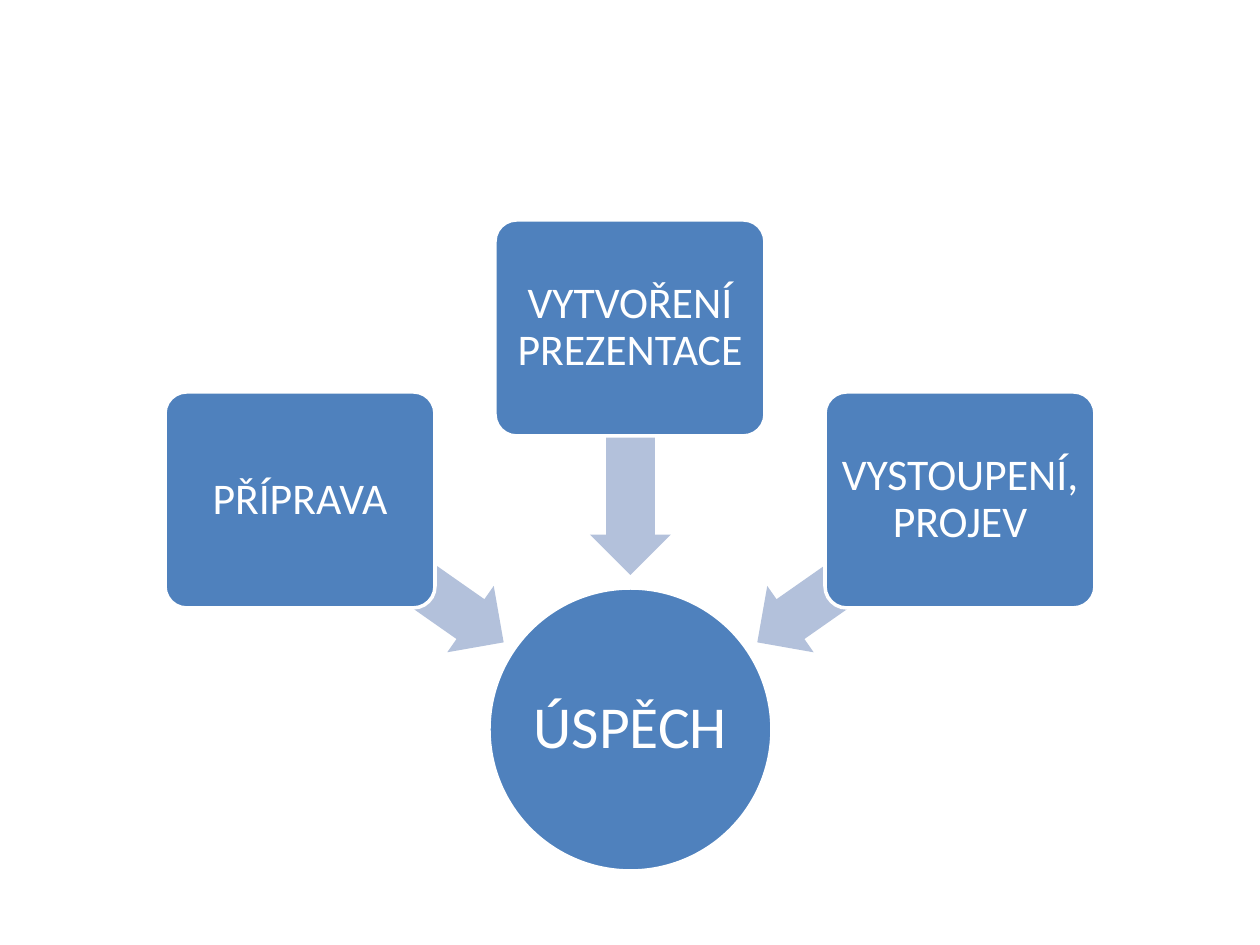
from dataclasses import dataclass

from pptx import Presentation
from pptx import util as u
from pptx.dml.color import RGBColor
from pptx.enum import shapes, text

EMU_PER_PX = 914400 // 126
SLIDE_WIDTH, SLIDE_HEIGHT = 1260, 945
CENTER_X = SLIDE_WIDTH // 2
STEP_WIDTH, STEP_HEIGHT, STEP_PITCH = 270, 216, 330
ARROW_WIDTH, ARROW_HEIGHT, ARROW_PITCH = 247, 81, 228
GOAL_SIZE, GOAL_TOP = 283, 588


@dataclass(frozen=True)
class Theme:
    font: str = "Calibri"
    blue: RGBColor = RGBColor(0x4F, 0x81, 0xBD)
    pale_blue: RGBColor = RGBColor(0xB3, 0xC1, 0xDB)
    white: RGBColor = RGBColor(0xFF, 0xFF, 0xFF)
    goal_size: int = 34
    step_size: int = 25
    outline: int = 2


THEME = Theme()


def px(length):
    return u.Emu(length * EMU_PER_PX)


def add_filled(slide, preset, center_x, top, width, height, color):
    box = (center_x - width // 2, top, width, height)
    figure = slide.shapes.add_shape(preset, *map(px, box))
    figure.shadow.inherit = False
    figure.fill.solid()
    figure.fill.fore_color.rgb = color
    return figure


def add_label(figure, wording, size, inset):
    figure.line.color.rgb = THEME.white
    figure.line.width = u.Pt(THEME.outline)
    frame = figure.text_frame
    frame.word_wrap = True
    frame.vertical_anchor = text.MSO_ANCHOR.MIDDLE
    frame.margin_left = frame.margin_right = px(inset)
    frame.margin_top = frame.margin_bottom = px(inset)
    paragraph = frame.paragraphs[0]
    paragraph.alignment = text.PP_ALIGN.CENTER
    paragraph.line_spacing = 0.9
    run = paragraph.add_run()
    run.text = wording
    run.font.name = THEME.font
    run.font.size = u.Pt(size)
    run.font.color.rgb = THEME.white


def add_goal(slide, wording):
    goal = add_filled(slide, shapes.MSO_SHAPE.OVAL, CENTER_X, GOAL_TOP,
                      GOAL_SIZE, GOAL_SIZE, THEME.blue)
    add_label(goal, wording, THEME.goal_size, 3)


def add_arrow(slide, center_x, center_y, angle):
    arrow = add_filled(slide, shapes.MSO_SHAPE.LEFT_ARROW, center_x,
                       center_y - ARROW_HEIGHT // 2,
                       ARROW_WIDTH, ARROW_HEIGHT, THEME.pale_blue)
    arrow.adjustments[0] = 0.6
    arrow.adjustments[1] = 0.5
    arrow.line.fill.background()
    arrow.rotation = angle


def add_step(slide, wording, center_x, top):
    step = add_filled(slide, shapes.MSO_SHAPE.ROUNDED_RECTANGLE, center_x, top,
                      STEP_WIDTH, STEP_HEIGHT, THEME.blue)
    step.adjustments[0] = 0.1
    add_label(step, wording, THEME.step_size, 6)


def main():
    deck = Presentation()
    deck.slide_width, deck.slide_height = px(SLIDE_WIDTH), px(SLIDE_HEIGHT)
    slide = deck.slides.add_slide(deck.slide_layouts[6])
    add_goal(slide, "ÚSPĚCH")
    steps = [
        ("PŘÍPRAVA", -1, 392, 571, 215),
        ("VYTVOŘENÍ PREZENTACE", 0, 220, 451, 270),
        ("VYSTOUPENÍ, PROJEV", 1, 392, 571, 325),
    ]
    for wording, side, step_top, arrow_y, angle in steps:
        add_arrow(slide, CENTER_X + side * ARROW_PITCH, arrow_y, angle)
        add_step(slide, wording, CENTER_X + side * STEP_PITCH, step_top)
    deck.save("out.pptx")


if __name__ == "__main__":
    main()
